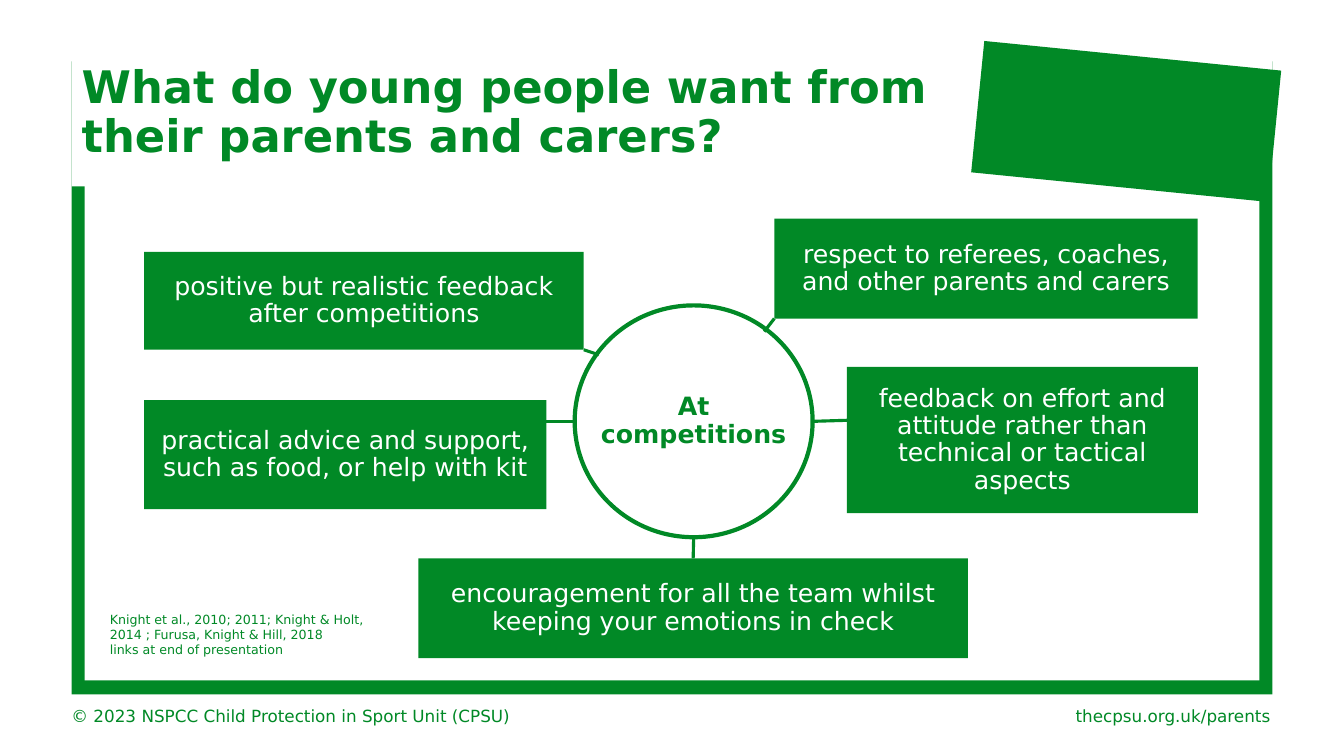
from dataclasses import dataclass
from typing import Optional

from lxml.etree import SubElement
from pptx import Presentation
from pptx.dml.color import RGBColor
from pptx.enum.shapes import MSO_CONNECTOR as Connector, MSO_SHAPE as Preset
from pptx.enum.text import MSO_ANCHOR as Anchor, MSO_AUTO_SIZE as AutoSize, PP_ALIGN as Align
from pptx.oxml.ns import qn
from pptx.util import Inches, Pt

COLOURS = {"green": "018926", "white": "FFFFFF"}
FONT = "DejaVu Sans"


@dataclass(frozen=True)
class Area:
    left: float
    top: float
    width: float
    height: float

    def lengths(self) -> list:
        return [Inches(v) for v in (self.left, self.top, self.width, self.height)]


@dataclass(frozen=True)
class Panel:
    area: Area
    fill: str
    rotation: float = 0


@dataclass(frozen=True)
class Wish:
    text: str
    area: Area
    link_start: tuple[float, float]
    link_end: tuple[float, float]
    joined_side: Optional[int] = None


@dataclass(frozen=True)
class Note:
    lines: tuple[str, ...]
    area: Area
    size: int
    align: Align = Align.LEFT


FRAME = [
    Panel(Area(0.71, 0.61, 11.91, 6.28), "green"),
    Panel(Area(0.84, 0.75, 11.65, 6), "white"),
    Panel(Area(6.34, 0.4, 6.28, 1.1), "white"),
    Panel(Area(9.69, 0.55, 2.96, 1.31), "green", 5.7),
]
TITLE_AREA = Area(0.71, 0.4, 8.7, 1.45)
HUB_AREA = Area(5.7, 3.03, 2.36, 2.3)
WISHES = [
    Wish("positive but realistic feedback after competitions",
         Area(1.43, 2.5, 4.36, 0.97), (5.94, 3.52), (5.79, 3.47)),
    Wish("practical advice and support, such as food, or help with kit",
         Area(1.43, 3.97, 3.99, 1.08), (5.7, 4.18), (5.42, 4.18)),
    Wish("encouragement for all the team whilst keeping your emotions in check",
         Area(4.15, 5.54, 5.45, 0.99), (6.88, 5.33), (6.88, 5.54), 0),
    Wish("feedback on effort and attitude rather than technical or tactical aspects",
         Area(8.4, 3.64, 3.48, 1.45), (8.06, 4.18), (8.4, 4.17)),
    Wish("respect to referees, coaches, and other parents and carers",
         Area(7.68, 2.17, 4.2, 0.99), (7.58, 3.29), (7.68, 3.16)),
]
NOTES = [
    Note(("© 2023 NSPCC Child Protection in Sport Unit (CPSU)",),
         Area(0.61, 6.95, 4.66, 0.3), 12),
    Note(("thecpsu.org.uk/parents",), Area(10.38, 6.95, 2.32, 0.3), 12, Align.RIGHT),
    Note(("Knight et al., 2010; 2011; Knight & Holt, 2014 ; Furusa, Knight & Hill, 2018",
          "links at end of presentation"), Area(0.99, 6.02, 3.01, 0.56), 9),
]


def colour(name: str) -> RGBColor:
    return RGBColor.from_string(COLOURS[name])


def set_all(target, values: dict) -> None:
    for name, value in values.items():
        setattr(target, name, value)


def paint(shape, fill: str) -> None:
    shape.fill.solid()
    shape.fill.fore_color.rgb = colour(fill)


def write(shape, lines: tuple[str, ...], frame: dict, layout: dict, font: dict, ink: str) -> None:
    set_all(shape.text_frame, {"word_wrap": True, **frame})
    shape.text_frame.text = "\n".join(lines)
    for para in shape.text_frame.paragraphs:
        set_all(para, layout)
        for span in para.runs:
            set_all(span.font, {"name": FONT, **font})
            span.font.color.rgb = colour(ink)


def add_block(page, preset: Preset, area: Area, fill: str):
    block = page.shapes.add_shape(preset, *area.lengths())
    block.shadow.inherit = False
    paint(block, fill)
    block.line.fill.background()
    return block


def add_panel(page, panel: Panel) -> None:
    add_block(page, Preset.RECTANGLE, panel.area, panel.fill).rotation = panel.rotation


def add_title(page) -> None:
    title = page.shapes.title
    page.shapes._spTree.append(title._element)
    names = ("left", "top", "width", "height")
    set_all(title, dict(zip(names, TITLE_AREA.lengths())))
    paint(title, "white")
    write(title, ("What do young people want from their parents and carers?",),
          {"vertical_anchor": Anchor.MIDDLE, "auto_size": AutoSize.NONE},
          {"alignment": Align.LEFT, "line_spacing": 0.9},
          {"size": Pt(32), "bold": True}, "green")


def write_centred(shape, text: str, side: float, edge: float, bold: bool, ink: str) -> None:
    margins = {
        "margin_left": Inches(side), "margin_right": Inches(side),
        "margin_top": Inches(edge), "margin_bottom": Inches(edge),
    }
    write(shape, (text,), {"vertical_anchor": Anchor.MIDDLE, **margins},
          {"alignment": Align.CENTER, "line_spacing": 0.9},
          {"size": Pt(18), "bold": bold}, ink)


def add_hub(page) -> None:
    hub = add_block(page, Preset.OVAL, HUB_AREA, "white")
    hub.line.color.rgb = colour("green")
    hub.line.width = Pt(3)
    inset = 0.22 - 0.35
    write_centred(hub, "At competitions", inset, inset, True, "green")


def add_wish(page, wish: Wish) -> None:
    box = add_block(page, Preset.RECTANGLE, wish.area, "green")
    write_centred(box, wish.text, 0.08, 0.01, False, "white")
    ends = [Inches(v) for v in wish.link_start + wish.link_end]
    link = page.shapes.add_connector(Connector.STRAIGHT, *ends)
    if wish.joined_side is not None:
        link.end_connect(box, wish.joined_side)
    link.line.color.rgb = colour("green")
    link.line.width = Pt(2.25)
    SubElement(link._element.spPr, qn("a:effectLst"))


def add_note(page, note: Note) -> None:
    box = page.shapes.add_textbox(*note.area.lengths())
    write(box, note.lines, {"auto_size": AutoSize.SHAPE_TO_FIT_TEXT},
          {"alignment": note.align}, {"size": Pt(note.size)}, "green")


def main() -> None:
    deck = Presentation()
    set_all(deck, {"slide_width": Inches(13.33), "slide_height": Inches(7.5)})
    page = deck.slides.add_slide(deck.slide_layouts[5])
    for panel in FRAME:
        add_panel(page, panel)
    add_title(page)
    add_hub(page)
    for wish in WISHES:
        add_wish(page, wish)
    for note in NOTES:
        add_note(page, note)
    deck.save("out.pptx")


if __name__ == "__main__":
    main()
